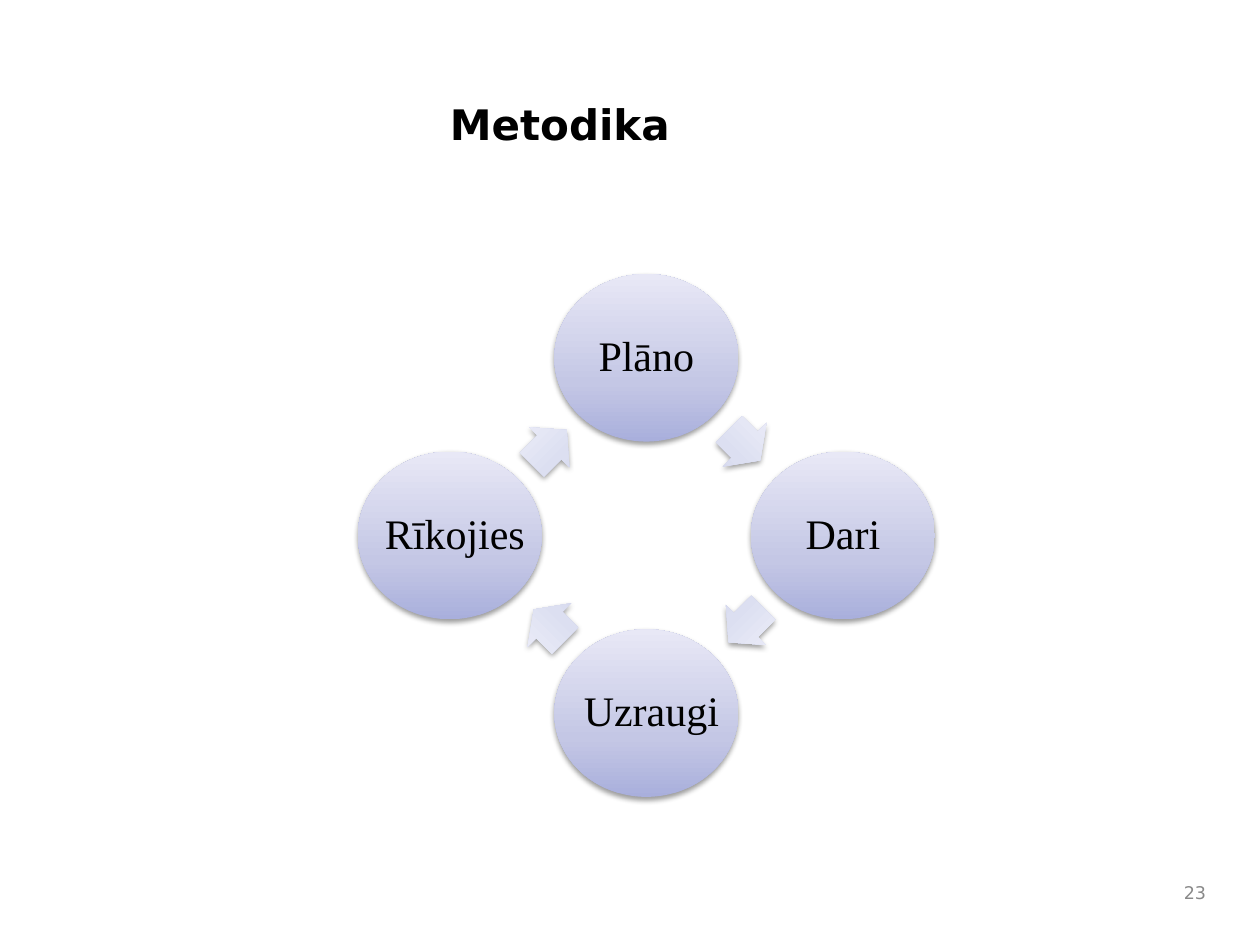
"""Build the Metodika slide: a four-step cycle joined by arrows."""
import copy

import pptx
import pptx.dml.color
import pptx.enum.shapes
import pptx.enum.text
import pptx.oxml
import pptx.oxml.ns
import pptx.util

Inches = pptx.util.Inches
Align = pptx.enum.text.PP_ALIGN
Shape = pptx.enum.shapes.MSO_SHAPE

CENTER_X, CENTER_Y = 5.13, 4.25
RADIUS_X, RADIUS_Y = 1.56, 1.41
CIRCLE_SIZE = (1.46, 1.33)
LABEL_HEIGHT = 0.94
CIRCLE_COLORS = ("A9AFDC", "C4C7E5", "E8E8F6")
ARROW_COLORS = ("CED1EB", "DCDFF1", "F0F0FA")
STOP_POSITIONS = (0, 0.35, 1)

# name, direction from the centre, label offset and width
STEPS = (
    ("Plāno", (0, -1), 0, 1.03),
    ("Dari", (1, 0), 0, 1.03),
    ("Uzraugi", (0, 1), 0.04, 1.1),
    ("Rīkojies", (-1, 0), 0.04, 1.28),
)
# centre, size, rotation
ARROWS = (
    ((5.91, 3.53), (0.35, 0.49), 45),
    ((5.92, 4.96), (0.39, 0.45), 135),
    ((4.36, 4.96), (0.35, 0.49), 225),
    ((4.36, 3.55), (0.39, 0.45), 315),
)


def color(value):
    """Return the colour for a hex string."""
    return pptx.dml.color.RGBColor.from_string(value)


def centered(x, y, width, height):
    """Return left, top, width and height of a box centred on a point."""
    return [Inches(v) for v in (x - width / 2, y - height / 2, width, height)]


def write_text(box, text, font, size, hue="000000", align=Align.LEFT, inset=(0.1, 0.05), bold=False):
    """Write one formatted run into a vertically centred text frame."""
    frame = box.text_frame
    frame.word_wrap = True
    frame.vertical_anchor = pptx.enum.text.MSO_ANCHOR.MIDDLE
    frame.margin_left = frame.margin_right = Inches(inset[0])
    frame.margin_top = frame.margin_bottom = Inches(inset[1])
    para = frame.paragraphs[0]
    para.alignment = align
    span = para.add_run()
    span.text = text
    span.font.name = font
    span.font.size = pptx.util.Pt(size)
    span.font.bold = bold
    span.font.color.rgb = color(hue)
    return para


def add_soft_shape(page, kind, bounds, colors):
    """Add an unlined shape with a three-stop gradient and a soft shadow."""
    shape = page.shapes.add_shape(kind, *bounds)
    shape.line.fill.background()
    shape.fill.gradient()
    shape.fill.gradient_angle = 90
    properties = shape._element.spPr
    stops = properties.find(".//" + pptx.oxml.ns.qn("a:gsLst"))
    stops.append(copy.deepcopy(stops[-1]))
    for stop, position, hue in zip(shape.fill.gradient_stops, STOP_POSITIONS, colors):
        stop.position = position
        stop.color.rgb = color(hue)
    shape.shadow.inherit = False
    effects = properties.find(pptx.oxml.ns.qn("a:effectLst"))
    effects.append(pptx.oxml.parse_xml(
        f'<a:outerShdw {pptx.oxml.ns.nsdecls("a")} blurRad="40000" dist="20000" '
        'dir="5400000" rotWithShape="0"><a:srgbClr val="000000">'
        '<a:alpha val="38000"/></a:srgbClr></a:outerShdw>'))
    return shape


def add_step(page, name, direction, offset, label_width):
    """Add one circle of the cycle with its label."""
    x = CENTER_X + direction[0] * RADIUS_X
    y = CENTER_Y + direction[1] * RADIUS_Y
    add_soft_shape(page, Shape.OVAL, centered(x, y, *CIRCLE_SIZE), CIRCLE_COLORS)
    label = page.shapes.add_textbox(*centered(x + offset, y, label_width, LABEL_HEIGHT))
    para = write_text(label, name, "Times New Roman", 24, align=Align.CENTER, inset=(0.01, 0.01))
    para.line_spacing = 0.9


def add_arrow(page, center, size, rotation):
    """Add one turned block arrow between two circles."""
    arrow = add_soft_shape(page, Shape.RIGHT_ARROW, centered(*center, *size), ARROW_COLORS)
    arrow.adjustments[0] = 0.6
    arrow.adjustments[1] = 0.5
    arrow.rotation = rotation


def add_title(page, text):
    """Place and fill the title placeholder."""
    title = page.shapes.title
    title.left, title.top = Inches(3.47), Inches(0.42)
    title.width, title.height = Inches(6.03), Inches(1.13)
    write_text(title, text, "DejaVu Sans", 24, bold=True)


def add_page_number(page, text):
    """Add the page number at the lower right."""
    bounds = [Inches(v) for v in (9.21, 6.92, 0.46, 0.33)]
    box = page.shapes.add_textbox(*bounds)
    write_text(box, text, "DejaVu Sans", 10, "898989", Align.RIGHT)


def main():
    """Build and save the deck."""
    deck = pptx.Presentation()
    deck.slide_width, deck.slide_height = Inches(10), Inches(7.5)
    page = deck.slides.add_slide(deck.slide_layouts[5])
    add_title(page, "Metodika")
    add_page_number(page, "23")
    for step, arrow in zip(STEPS, ARROWS):
        add_step(page, *step)
        add_arrow(page, *arrow)
    deck.save("out.pptx")


if __name__ == "__main__":
    main()
